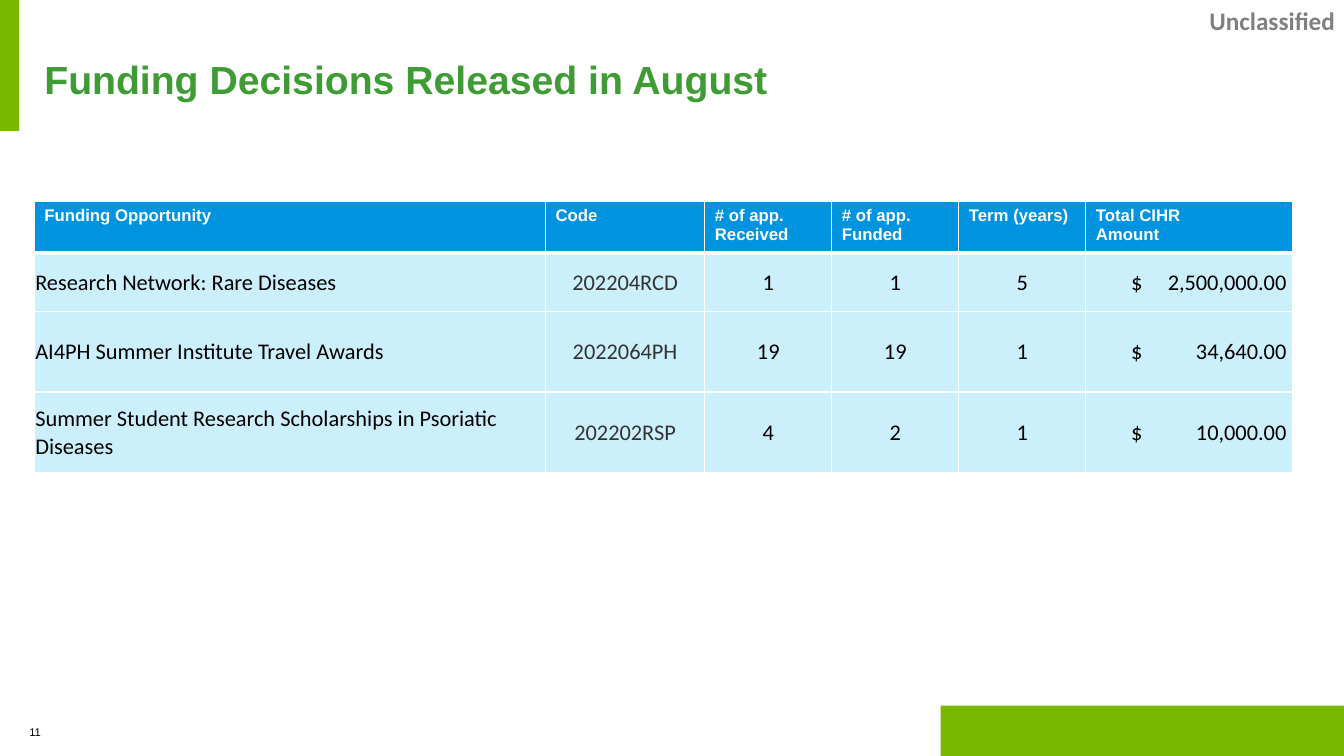
"""Builds the slide of funding decisions released in August."""
from dataclasses import dataclass
from typing import Any

from lxml import etree
from pptx import Presentation
from pptx.dml.color import RGBColor
from pptx.enum.shapes import MSO_SHAPE
from pptx.enum.text import MSO_ANCHOR, MSO_AUTO_SIZE, PP_ALIGN
from pptx.oxml.ns import qn
from pptx.util import Emu, Pt

RECT = MSO_SHAPE.RECTANGLE
TOP, MIDDLE = MSO_ANCHOR.TOP, MSO_ANCHOR.MIDDLE
LEFT, CENTER, RIGHT = PP_ALIGN.LEFT, PP_ALIGN.CENTER, PP_ALIGN.RIGHT
NO_FIT = MSO_AUTO_SIZE.NONE

PX = 9144
COLORS = {
    "green": "7AB800", "title": "3F9C35", "header": "0094E0", "body": "00B0F0",
    "white": "FFFFFF", "black": "000000", "code": "333333", "grey": "808080",
}
BODY_ALPHA = 20
AMOUNT_TAB = 154


@dataclass(frozen=True)
class Box:
    """A rectangle in px."""
    x: int
    y: int
    w: int
    h: int

    def emu(self) -> tuple[Emu, ...]:
        """Return the rectangle in EMU."""
        return tuple(Emu(v * PX) for v in (self.x, self.y, self.w, self.h))


@dataclass(frozen=True)
class Style:
    """Text and frame format, with margins in px as left, top, right, bottom."""
    size: int
    font: str
    color: str
    bold: bool = False
    align: PP_ALIGN = LEFT
    anchor: MSO_ANCHOR = TOP
    margins: tuple[int, int, int, int] = (10, 5, 10, 5)
    spacing: float = 1.0


@dataclass(frozen=True)
class Label:
    """A text box."""
    box: Box
    text: str
    style: Style


@dataclass(frozen=True)
class Column:
    """A table column with its header and body style."""
    header: str
    width: int
    style: Style


def body_style(color: str = "black", align: PP_ALIGN = CENTER, left: int = 1) -> Style:
    """Return the style of a body cell."""
    return Style(16, "Calibri", color, align=align, anchor=MIDDLE, margins=(left, 1, 1, 0))


BARS = [Box(933, 700, 400, 50), Box(0, 0, 19, 130)]
TITLE = Label(Box(34, 50, 1200, 57), "Funding Decisions Released in August",
              Style(28, "Arial", "title", True, anchor=MIDDLE))
LABELS = [
    Label(Box(29, 700, 49, 50), "11",
          Style(8, "Arial", "black", anchor=MIDDLE, margins=(0, 5, 0, 0), spacing=0.9)),
    Label(Box(1117, 0, 217, 40), "Unclassified",
          Style(18, "Calibri", "grey", True, RIGHT)),
]
HEADER = Style(12, "Arial", "white", True)
COLUMNS = [
    Column("Funding Opportunity", 507, body_style(align=LEFT)),
    Column("Code", 158, body_style("code")),
    Column("# of app. Received", 126, body_style()),
    Column("# of app. Funded", 126, body_style()),
    Column("Term (years)", 126, body_style()),
    Column("Total CIHR\nAmount", 205, body_style(align=LEFT, left=45)),
]
ROWS = [
    ("Research Network: Rare Diseases", "202204RCD", "1", "1", "5", "$\t2,500,000.00"),
    ("AI4PH Summer Institute Travel Awards", "2022064PH", "19", "19", "1", "$\t34,640.00"),
    ("Summer Student Research Scholarships in Psoriatic Diseases", "202202RSP",
     "4", "2", "1", "$\t10,000.00"),
]
ROW_HEIGHTS = [51, 58, 80, 80]
TABLE_LEFT, TABLE_TOP = 34, 200


def rgb(name: str) -> RGBColor:
    """Return a named colour."""
    return RGBColor.from_string(COLORS[name])


def set_attrs(target: Any, values: dict[str, Any]) -> None:
    """Set attributes from a dict."""
    for key, value in values.items():
        setattr(target, key, value)


def margins(style: Style) -> dict[str, Emu]:
    """Return the margin attributes of a style."""
    sides = ("left", "top", "right", "bottom")
    return {f"margin_{side}": Emu(v * PX) for side, v in zip(sides, style.margins)}


def write(tf: Any, text: str, style: Style) -> None:
    """Write formatted text into a text frame."""
    tf.text = text
    for p in tf.paragraphs:
        set_attrs(p, {"alignment": style.align, "line_spacing": style.spacing})
        if "\t" in text:
            tabs = etree.SubElement(p._p.get_or_add_pPr(), qn("a:tabLst"))
            etree.SubElement(tabs, qn("a:tab"), pos=str(AMOUNT_TAB * PX), algn="r")
        for r in p.runs:
            set_attrs(r.font, {"size": Pt(style.size), "name": style.font, "bold": style.bold})
            r.font.color.rgb = rgb(style.color)


def write_frame(tf: Any, label: Label) -> None:
    """Format a text frame and write its label."""
    set_attrs(tf, {"word_wrap": True, "auto_size": NO_FIT,
                   "vertical_anchor": label.style.anchor, **margins(label.style)})
    write(tf, label.text, label.style)


def add_bar(s: Any, box: Box) -> None:
    """Draw a green bar."""
    sp = s.shapes.add_shape(RECT, *box.emu())
    sp.shadow.inherit = False
    sp.fill.solid()
    sp.fill.fore_color.rgb = rgb("green")
    sp.line.fill.background()


def add_borders(cell: Any, row: int) -> None:
    """Draw white borders, thicker below the header."""
    widths = {"lnL": 1, "lnR": 1, "lnT": 3 if row == 1 else 1, "lnB": 3 if row == 0 else 1}
    for tag, width in widths.items():
        ln = etree.SubElement(cell._tc.get_or_add_tcPr(), qn(f"a:{tag}"), w=str(Pt(width)))
        fill = etree.SubElement(ln, qn("a:solidFill"))
        etree.SubElement(fill, qn("a:srgbClr"), val=COLORS["white"])


def fill_cell(cell: Any, row: int, text: str, style: Style) -> None:
    """Format one table cell and write its text."""
    set_attrs(cell, {"vertical_anchor": style.anchor, **margins(style)})
    add_borders(cell, row)
    cell.fill.solid()
    cell.fill.fore_color.rgb = rgb("body" if row else "header")
    if row:
        clr = cell._tc.tcPr.find(f"{qn('a:solidFill')}/{qn('a:srgbClr')}")
        etree.SubElement(clr, qn("a:alpha"), val=str(BODY_ALPHA * 1000))
    write(cell.text_frame, text, style)


def add_funding_table(s: Any) -> None:
    """Draw the table of funding decisions."""
    box = Box(TABLE_LEFT, TABLE_TOP, sum(c.width for c in COLUMNS), sum(ROW_HEIGHTS))
    table = s.shapes.add_table(len(ROW_HEIGHTS), len(COLUMNS), *box.emu()).table
    table.horz_banding = False
    for row, height in enumerate(ROW_HEIGHTS):
        table.rows[row].height = Emu(height * PX)
    for col, column in enumerate(COLUMNS):
        table.columns[col].width = Emu(column.width * PX)
        fill_cell(table.cell(0, col), 0, column.header, HEADER)
        for row, values in enumerate(ROWS, 1):
            fill_cell(table.cell(row, col), row, values[col], column.style)


def main() -> None:
    """Build and save the slide."""
    prs = Presentation()
    set_attrs(prs, {"slide_width": Emu(1333 * PX), "slide_height": Emu(750 * PX)})
    s = prs.slides.add_slide(prs.slide_layouts[5])
    title = s.shapes.title
    set_attrs(title, dict(zip(("left", "top", "width", "height"), TITLE.box.emu())))
    write_frame(title.text_frame, TITLE)
    for bar in BARS:
        add_bar(s, bar)
    add_funding_table(s)
    for label in LABELS:
        write_frame(s.shapes.add_textbox(*label.box.emu()).text_frame, label)
    prs.save("out.pptx")


if __name__ == "__main__":
    main()
